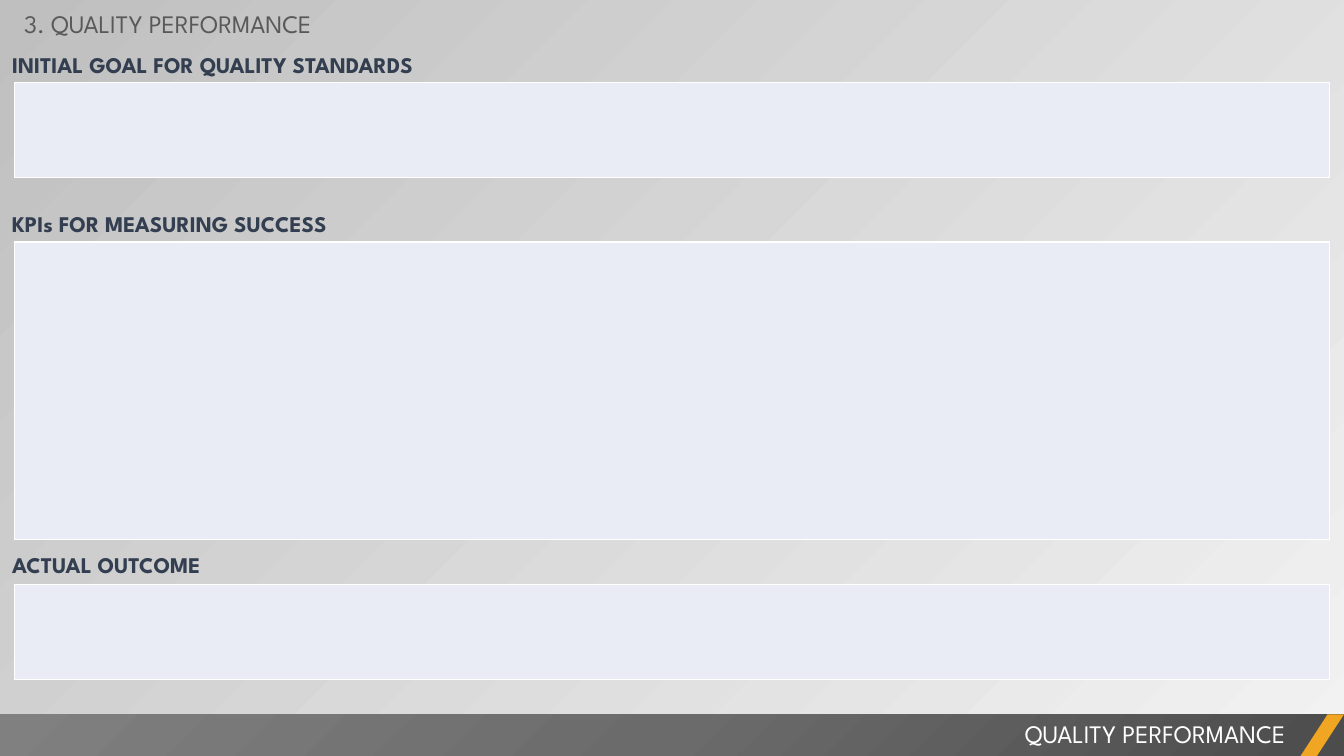
from pptx import Presentation
from pptx.dml.color import RGBColor
from pptx.enum import shapes, text
from pptx.oxml import parse_xml
from pptx.oxml.ns import nsdecls
from pptx.util import Pt

FONT = "League Spartan"
WHITE = RGBColor(0xFF, 0xFF, 0xFF)
PALE = RGBColor(0xE9, 0xEB, 0xF5)
NAVY = RGBColor(0x33, 0x3F, 0x50)
GRAY = RGBColor(0x59, 0x59, 0x59)
AMBER = RGBColor(0xF0, 0xA6, 0x22)
LIGHT = RGBColor(0xF2, 0xF2, 0xF2)
SILVER = RGBColor(0xBF, 0xBF, 0xBF)
BAR = [(0, RGBColor(0x4C, 0x4C, 0x4C)), (50, RGBColor(0x6B, 0x6B, 0x6B)),
       (100, RGBColor(0x80, 0x80, 0x80))]

WIDTH, HEIGHT = 960, 540
LEFT, SPAN = 10.08, 939.6
BASE = 510.3

# heading, heading top, heading width, box top, box height
PARTS = [
    ("INITIAL GOAL FOR QUALITY STANDARDS", 30.24, 401.76, 59.04, 67.68),
    ("KPIs FOR MEASURING SUCCESS", 143.28, 382.32, 172.8, 212.4),
    ("ACTUAL OUTCOME", 387.36, 242.64, 417.6, 67.68),
]


def paint_back(slide):
    fill = slide.background.fill
    fill.gradient()
    fill.gradient_angle = 135
    for stop, color in zip(fill.gradient_stops, (LIGHT, SILVER)):
        stop.color.rgb = color


def add_label(slide, words, left, top, width, size, color):
    """Add one line of text and return its frame and paragraph."""
    frame = slide.shapes.add_textbox(
        Pt(left), Pt(top), Pt(width), Pt(28.8)).text_frame
    frame.word_wrap = True
    para = frame.paragraphs[0]
    para.text = words
    para.font.name = FONT
    para.font.size = Pt(size)
    para.font.color.rgb = color
    return frame, para


def add_head(slide, words, top, width):
    frame, para = add_label(slide, words, 0, top, width, 16, NAVY)
    frame.margin_left = frame.margin_right = Pt(8.64)
    frame.margin_top = frame.margin_bottom = Pt(4.32)
    para.font.bold = True
    para.line_spacing = Pt(21.5)
    para.space_before = Pt(3.2)


def add_box(slide, top, height):
    """Add a table of one empty cell with a white border."""
    table = slide.shapes.add_table(
        1, 1, Pt(LEFT), Pt(top), Pt(SPAN), Pt(height)).table
    table.first_row = table.horz_banding = False
    cell = table.cell(0, 0)
    props = cell._tc.get_or_add_tcPr()
    for side in "LRTB":
        props.append(parse_xml(
            f'<a:ln{side} {nsdecls("a")} w="{Pt(1)}"><a:solidFill>'
            f'<a:srgbClr val="{WHITE}"/></a:solidFill></a:ln{side}>'))
    cell.fill.solid()
    cell.fill.fore_color.rgb = PALE


def add_shape(slide, kind, left, width):
    """Add a plain shape along the foot of the slide."""
    shape = slide.shapes.add_shape(
        kind, Pt(left), Pt(BASE), Pt(width), Pt(HEIGHT - BASE))
    shape.shadow.inherit = False
    shape.line.fill.background()
    shape.fill.solid()
    shape.fill.fore_color.rgb = AMBER
    return shape


def fade_bar(shape):
    """Fill the shape with a round gradient centred at its lower right."""
    stops = "".join(
        f'<a:gs pos="{pos * 1000}"><a:srgbClr val="{color}"/></a:gs>'
        for pos, color in BAR)
    props = shape._element.spPr
    old = props.find("{*}solidFill")
    props.replace(old, parse_xml(
        f'<a:gradFill {nsdecls("a")}><a:gsLst>{stops}</a:gsLst>'
        '<a:path path="circle"><a:fillToRect l="100000" t="100000"/>'
        '</a:path></a:gradFill>'))


def main():
    deck = Presentation()
    deck.slide_width, deck.slide_height = Pt(WIDTH), Pt(HEIGHT)
    slide = deck.slides.add_slide(deck.slide_layouts[6])
    paint_back(slide)
    for words, top, width, edge, height in PARTS:
        add_box(slide, edge, height)
        add_head(slide, words, top, width)
    add_label(slide, "3. QUALITY PERFORMANCE", LEFT, 2.16, 382.32, 18, GRAY)

    kind = shapes.MSO_SHAPE
    fade_bar(add_shape(slide, kind.RECTANGLE, 0, WIDTH))
    _, para = add_label(
        slide, "QUALITY PERFORMANCE", 378, 509.76, 547.2, 18, WHITE)
    para.alignment = text.PP_ALIGN.RIGHT
    slash = add_shape(slide, kind.PARALLELOGRAM, 929, 31)
    slash.adjustments[0] = 0.65
    deck.save("out.pptx")


if __name__ == "__main__":
    main()
